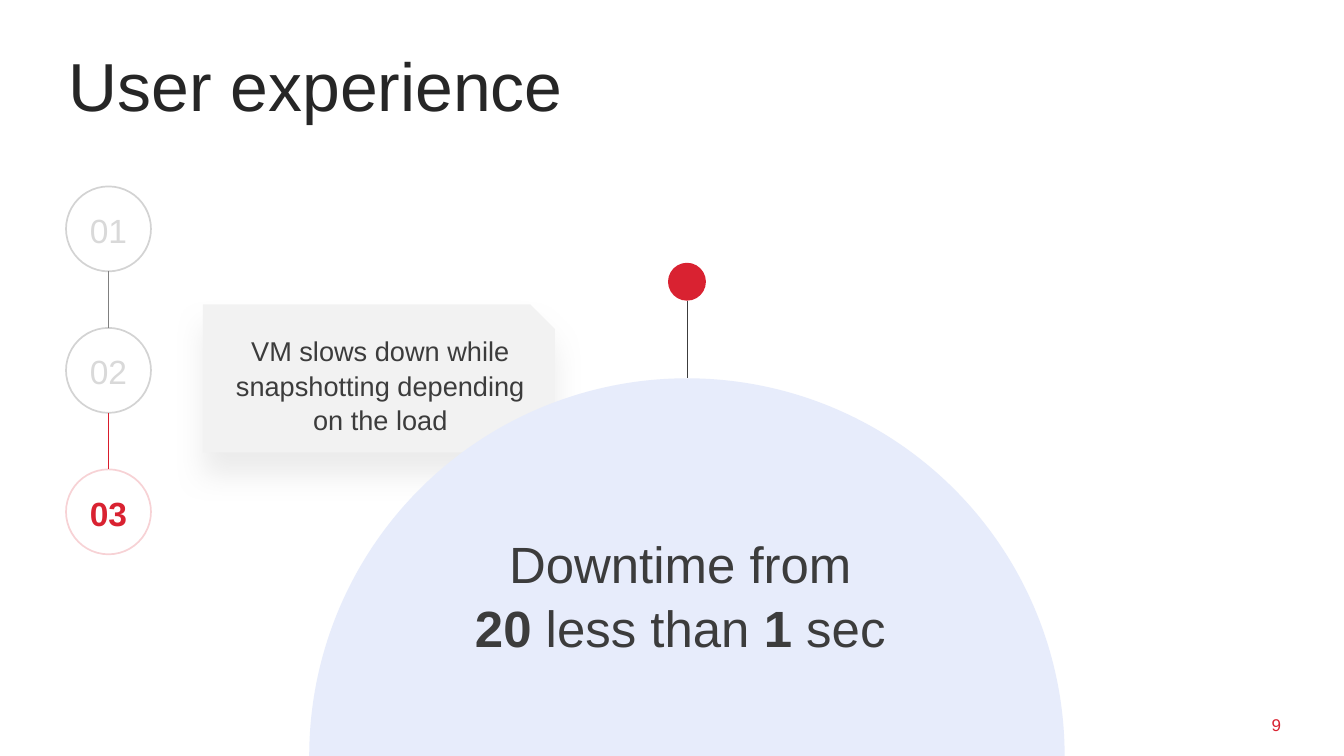
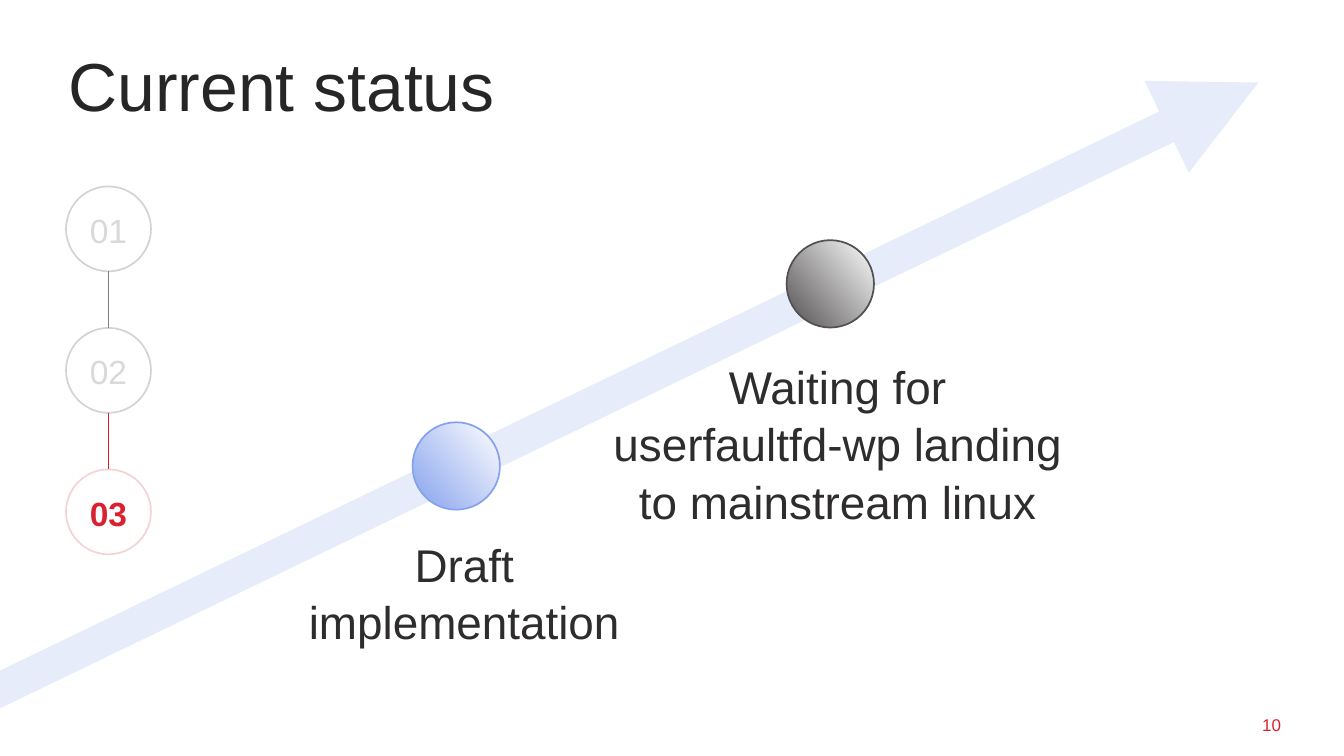
from lxml import etree
from pptx import Presentation
from pptx.dml.color import RGBColor
from pptx.enum import shapes, text
from pptx.oxml.ns import qn
from pptx.util import Inches, Pt

COLORS = {
    "white": "FFFFFF",
    "title": "262626",
    "body": "3C3C3C",
    "label": "2E2C2C",
    "accent": "D92231",
    "rail_done": "808080",
    "rail_current": "D91D2C",
    "step_done": "D9D9D9",
    "pale_blue": "E7ECFB",
    "blue": "86A2ED",
    "graphite": "525051",
    "card": "F2F2F2",
    "shadow": "BFBFBF",
}
RGB = {name: RGBColor.from_string(value) for name, value in COLORS.items()}
FONT = "Arial"
OVAL = shapes.MSO_SHAPE.OVAL
LEFT, CENTER, RIGHT = text.PP_ALIGN.LEFT, text.PP_ALIGN.CENTER, text.PP_ALIGN.RIGHT
TOP, MIDDLE = text.MSO_ANCHOR.TOP, text.MSO_ANCHOR.MIDDLE


def write(shape, content, size, color, align=CENTER, anchor=TOP,
          margins=(0.2, 0.1), indent=0):
    """Fill a shape with one paragraph; ** toggles bold, a newline breaks the line."""
    frame = shape.text_frame
    frame.word_wrap = True
    frame.vertical_anchor = anchor
    frame.margin_left = frame.margin_right = Inches(margins[0])
    frame.margin_top = frame.margin_bottom = Inches(margins[1])
    paragraph = frame.paragraphs[0]
    paragraph.alignment = align
    paragraph.line_spacing = 1.05
    if indent:
        paragraph._p.get_or_add_pPr().set("marL", str(Inches(indent)))
    for part_index, part in enumerate(content.split("**")):
        for line_index, line in enumerate(part.split("\n")):
            if line_index:
                paragraph.add_line_break()
            if line:
                run = paragraph.add_run()
                run.text = line
                run.font.name = FONT
                run.font.size = Pt(size)
                run.font.bold = part_index % 2 == 1
                run.font.color.rgb = RGB[color]


def draw_line(slide, start, end, color, width=0.75):
    line = slide.shapes.add_connector(
        shapes.MSO_CONNECTOR.STRAIGHT, *(Inches(value) for value in start + end))
    line.line.color.rgb = RGB[color]
    line.line.width = Pt(width)
    etree.SubElement(line._element.spPr, qn("a:effectLst"))
    return line


deck = Presentation()
deck.slide_width, deck.slide_height = Inches(21.99), Inches(12.37)

# Shared frame: page number, title and step rail
STEP_LEFT, STEP_TOP, STEP_SIZE, STEP_PITCH = 1.08, 3.05, 1.39, 2.315
CURRENT_STEP = 3
slides = []
for page, title in ((9, "User experience"), (10, "Current status")):
    slide = deck.slides.add_slide(deck.slide_layouts[6])
    slides.append(slide)
    page_box = slide.shapes.add_textbox(Inches(18.56), Inches(11.67), Inches(2.5), Inches(0.35))
    write(page_box, str(page), 20, "accent", align=RIGHT, anchor=MIDDLE, margins=(0.1, 0))
    title_box = slide.shapes.add_textbox(Inches(0.92), Inches(0.55), Inches(20.14), Inches(1.53))
    write(title_box, title, 80, "title", align=LEFT)

    for number in range(1, CURRENT_STEP + 1):
        current = number == CURRENT_STEP
        top = STEP_TOP + (number - 1) * STEP_PITCH
        step = slide.shapes.add_shape(
            OVAL, Inches(STEP_LEFT), Inches(top), Inches(STEP_SIZE), Inches(STEP_SIZE))
        step.shadow.inherit = False
        step.fill.solid()
        step.fill.fore_color.rgb = RGB["white"]
        step.line.color.rgb = RGB["accent" if current else "title"]
        step.line.width = Pt(2)
        ring_color = step.line._ln.find(".//" + qn("a:srgbClr"))
        etree.SubElement(ring_color, qn("a:alpha"), val="20000")
        write(step, f"**{number:02}**" if current else f"{number:02}", 39.5,
              "accent" if current else "step_done", anchor=MIDDLE, margins=(0, 0))
        if number > 1:
            middle = STEP_LEFT + STEP_SIZE / 2
            draw_line(slide, (middle, top - STEP_PITCH + STEP_SIZE), (middle, top),
                      "rail_current" if current else "rail_done")

# User experience
experience, status = slides
card = experience.shapes.add_shape(
    shapes.MSO_SHAPE.SNIP_1_RECTANGLE, Inches(3.32), Inches(4.98), Inches(5.76), Inches(2.42))
card.fill.solid()
card.fill.fore_color.rgb = RGB["card"]
card.line.fill.background()
card.shadow.inherit = False
shadow = etree.SubElement(
    card._element.spPr.find(qn("a:effectLst")), qn("a:outerShdw"),
    blurRad=str(Pt(34)), dist=str(Pt(26)), dir="5400000", algn="t", rotWithShape="0")
shadow_color = etree.SubElement(shadow, qn("a:srgbClr"), val=COLORS["shadow"])
etree.SubElement(shadow_color, qn("a:alpha"), val="30000")
write(card, "VM slows down while snapshotting depending\non the load", 32, "body",
      anchor=MIDDLE, margins=(0.1, 0), indent=0.25)

AXIS = 11.24
for top, diameter, color in ((4.3, 0.62, "accent"), (6.19, 12.36, "pale_blue")):
    disc = experience.shapes.add_shape(
        OVAL, Inches(AXIS - diameter / 2), Inches(top), Inches(diameter), Inches(diameter))
    disc.shadow.inherit = False
    disc.fill.solid()
    disc.fill.fore_color.rgb = RGB[color]
    disc.line.fill.background()
draw_line(experience, (AXIS, 4.92), (AXIS, 6.19), "body")
downtime = experience.shapes.add_textbox(Inches(2.92), Inches(8.56), Inches(16.42), Inches(1.17))
write(downtime, "Downtime from\n**20** less than **1** sec", 60, "body")

# Current status
progress = draw_line(status, (-0.37, 11.46), (20.59, 1.35), "pale_blue", width=40)
etree.SubElement(progress.line._ln, qn("a:tailEnd"), type="triangle")

MILESTONE_SIZE = 1.43
milestones = (
    (6.75, 6.91, "blue", "Draft\nimplementation", (3.95, 8.63, 7.04, 2.97)),
    (12.87, 3.93, "graphite", "Waiting for\nuserfaultfd-wp landing to mainstream linux",
     (9.48, 5.72, 8.2, 2.97)),
)
for left, top, color, caption, caption_area in milestones:
    milestone = status.shapes.add_shape(
        OVAL, Inches(left), Inches(top), Inches(MILESTONE_SIZE), Inches(MILESTONE_SIZE))
    milestone.shadow.inherit = False
    milestone.fill.gradient()
    milestone.fill.gradient_angle = 220
    for stop, stop_color in zip(milestone.fill.gradient_stops, ("white", color)):
        stop.color.rgb = RGB[stop_color]
    milestone.line.color.rgb = RGB[color]
    milestone.line.width = Pt(2)
    caption_box = status.shapes.add_textbox(*(Inches(value) for value in caption_area))
    write(caption_box, caption, 54, "label", indent=0.25)

deck.save("out.pptx")
